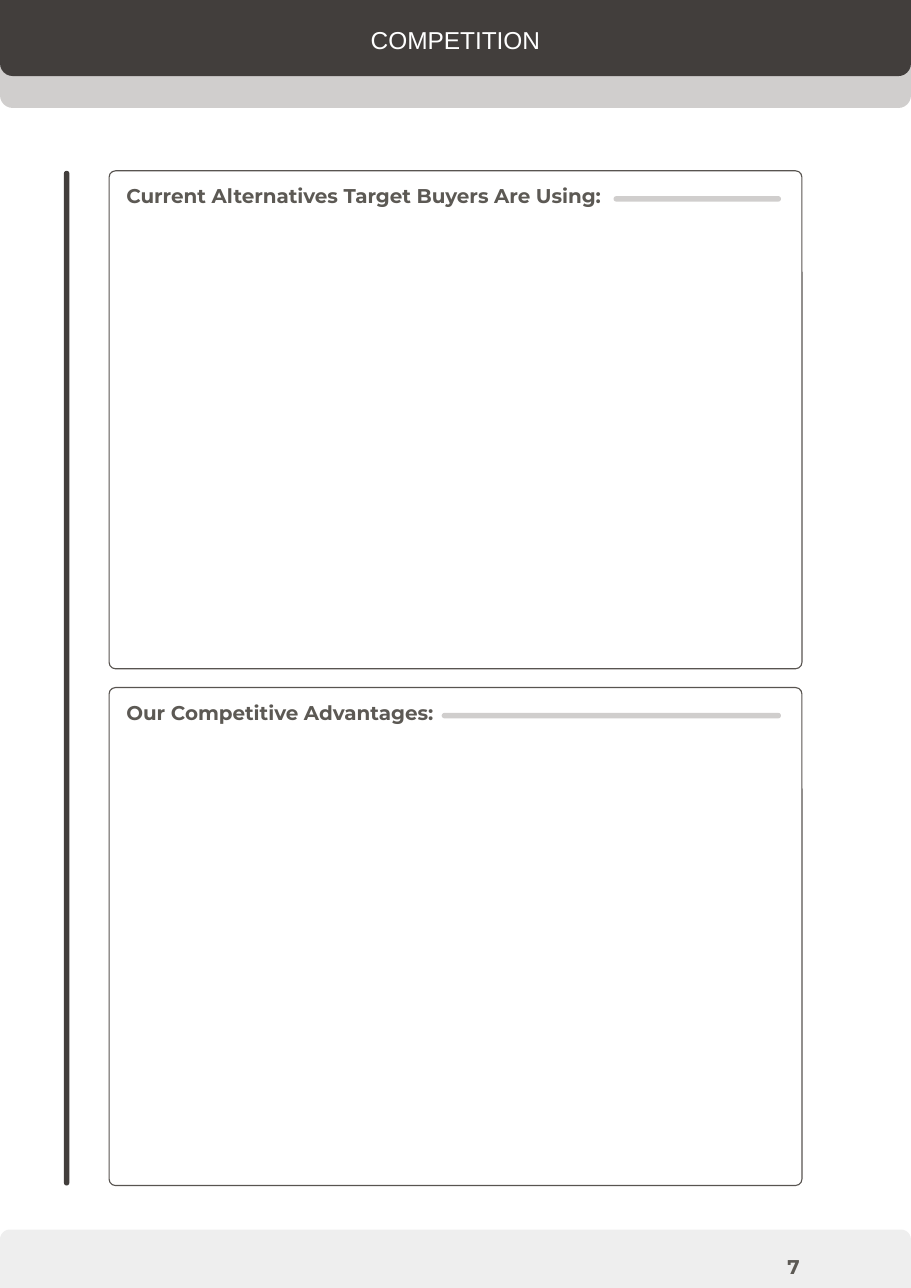
from pptx import Presentation
from pptx.dml.color import RGBColor
from pptx.enum.shapes import MSO_SHAPE
from pptx.enum.text import MSO_ANCHOR, PP_ALIGN
from pptx.util import Inches, Pt

ROUND = MSO_SHAPE.ROUNDED_RECTANGLE
ROUND_TOP = MSO_SHAPE.ROUND_2_SAME_RECTANGLE
TOP = MSO_ANCHOR.TOP
LEFT, CENTER, RIGHT = PP_ALIGN.LEFT, PP_ALIGN.CENTER, PP_ALIGN.RIGHT

COLORS = {"dark": "423E3C", "grey": "D0CECD", "pale": "EEEEEE",
          "outline": "585450", "text": "5C5954", "white": "FFFFFF"}

PAGE_W, PAGE_H = 8.27, 11.69
BAND_H = 0.69
PANEL_X, PANEL_Y, PANEL_W, PANEL_H = 0.99, 1.55, 6.29, 4.52
PANEL_STEP = 4.69
RULE_END = PANEL_X + PANEL_W - 0.19
RULE_DROP = 0.23
BAR = 0.05
# Each section: heading and left end of the rule that follows it
SECTIONS = [("Current Alternatives Target Buyers Are Using:", 5.57),
            ("Our Competitive Advantages:", 4.01)]


def color(name):
    return RGBColor.from_string(COLORS[name])


def add_block(slide, kind, x, y, w, h, corner, fill=None):
    """Add a flat shape without outline; no fill name leaves it hollow."""
    block = slide.shapes.add_shape(kind, Inches(x), Inches(y), Inches(w), Inches(h))
    block.adjustments[0] = corner
    block.shadow.inherit = False
    block.line.fill.background()
    if fill:
        block.fill.solid()
        block.fill.fore_color.rgb = color(fill)
    else:
        block.fill.background()
    return block


def add_band(slide, y, h, fill, hanging=False):
    """Add a full-width band; a hanging one has its round corners below."""
    band = add_block(slide, ROUND_TOP, 0, y, PAGE_W, h, 0.167, fill)
    if hanging:
        band.rotation = 180


def add_bar(slide, x, y, w, h, fill):
    add_block(slide, ROUND, x, y, w, h, 0.5, fill)


def write(holder, words, align, size, font, ink, bold=False, inset=(0, 0)):
    frame = holder.text_frame
    frame.word_wrap = True
    frame.vertical_anchor = TOP
    frame.margin_left = frame.margin_right = Inches(inset[0])
    frame.margin_top = frame.margin_bottom = Inches(inset[1])
    frame.text = words
    paragraph = frame.paragraphs[0]
    paragraph.alignment = align
    style = paragraph.runs[0].font
    style.size, style.name, style.bold = Pt(size), font, bold
    style.color.rgb = color(ink)
    return paragraph


def add_label(slide, x, y, w, h):
    return slide.shapes.add_textbox(Inches(x), Inches(y), Inches(w), Inches(h))


def add_section(slide, row, heading, rule_start):
    y = PANEL_Y + row * PANEL_STEP
    panel = add_block(slide, ROUND, PANEL_X, y, PANEL_W, PANEL_H, 0.013)
    panel.line.color.rgb = color("outline")
    panel.line.width = Pt(0.75)
    write(panel, heading, LEFT, 13, "Montserrat", "text", True, (0.14, 0.1))
    add_bar(slide, rule_start, y + RULE_DROP, RULE_END - rule_start, BAR, "grey")


def main():
    deck = Presentation()
    deck.slide_width, deck.slide_height = Inches(PAGE_W), Inches(PAGE_H)
    slide = deck.slides.add_slide(deck.slide_layouts[6])

    add_band(slide, 0.29, BAND_H, "grey", hanging=True)
    add_band(slide, 0, BAND_H, "dark", hanging=True)
    add_band(slide, 11.16, 0.54, "pale")

    title = add_label(slide, 1.28, 0.13, 5.71, 0.47)
    write(title, "COMPETITION", CENTER, 16, "Arial", "white", inset=(0.1, 0.1))
    page_number = add_label(slide, 6.82, 11.32, 0.44, 0.22)
    number_line = write(page_number, "7", RIGHT, 13, "Montserrat", "text", True)
    number_line.line_spacing = 1.3

    add_bar(slide, 0.58, PANEL_Y, BAR, PANEL_STEP + PANEL_H, "dark")
    for row, (heading, rule_start) in enumerate(SECTIONS):
        add_section(slide, row, heading, rule_start)

    deck.save("out.pptx")


if __name__ == "__main__":
    main()
